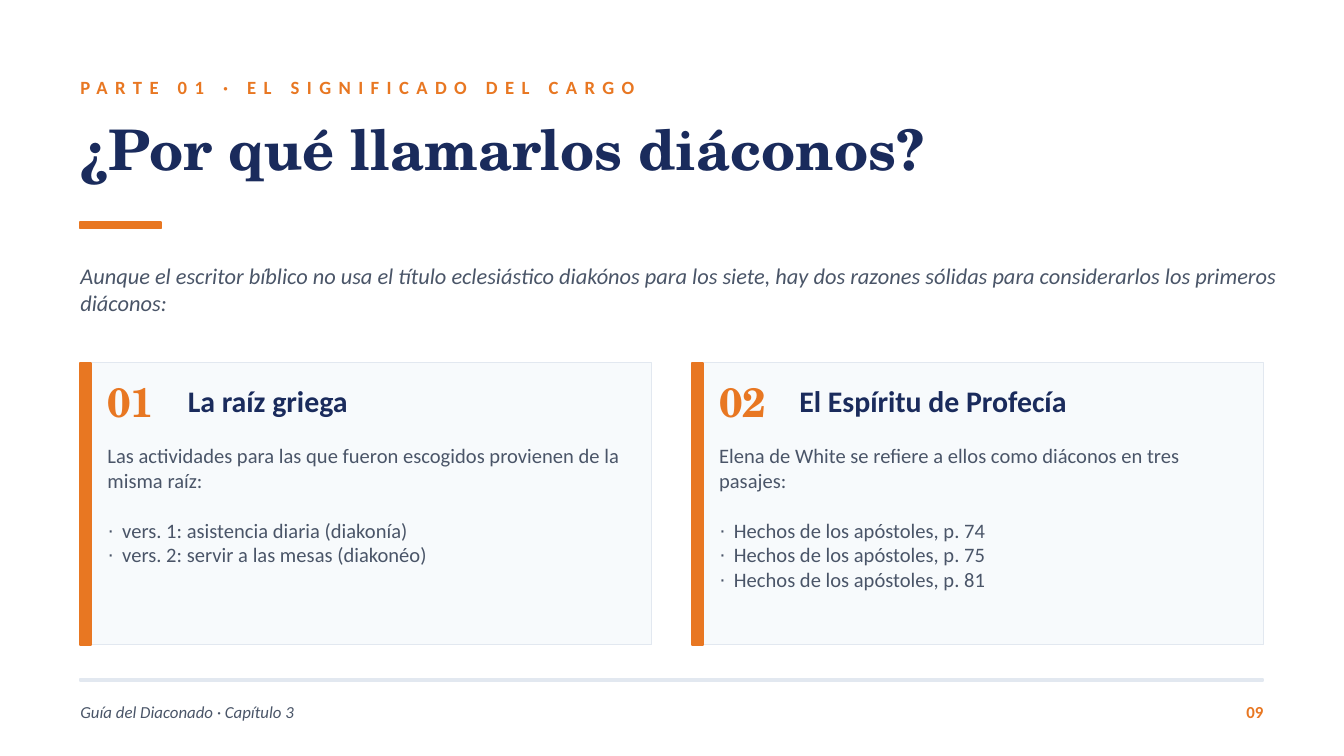
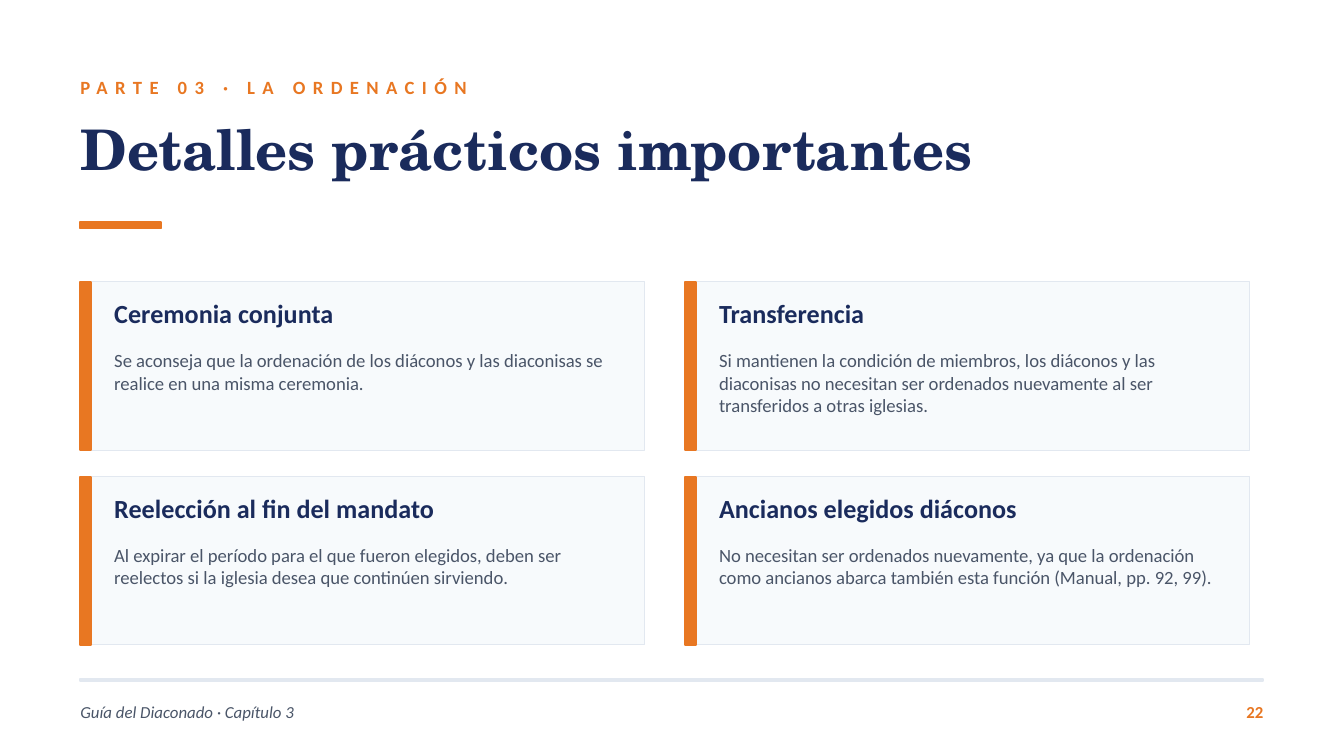
import pptx
import pptx.dml.color
import pptx.enum.shapes
import pptx.enum.text
import pptx.oxml.ns
import pptx.util
import lxml.etree

Cm = pptx.util.Cm
Pt = pptx.util.Pt
ANCHOR = pptx.enum.text.MSO_ANCHOR
ALIGN = pptx.enum.text.PP_ALIGN

COLORS = {
    "navy": "1A2B5C",
    "orange": "E87722",
    "gray": "4A5568",
    "card": "F7FAFC",
    "border": "E2E8F0",
}
SANS = "Calibri"
SERIF = "TeX Gyre Schola"
LEFT = 1.52
BAR_WIDTH = 0.2
BULLET_INDENT = 0.28


def add_rect(page, place, fill, border, border_width=1):
    rect = page.shapes.add_shape(
        pptx.enum.shapes.MSO_SHAPE.RECTANGLE, *[Cm(length) for length in place])
    rect.shadow.inherit = False
    rect.fill.solid()
    rect.fill.fore_color.rgb = pptx.dml.color.RGBColor.from_string(COLORS[fill])
    rect.line.color.rgb = pptx.dml.color.RGBColor.from_string(COLORS[border])
    rect.line.width = Pt(border_width)


def put_text(page, place, lines, size, color, font=SANS, bold=False, italic=False,
             align=ALIGN.LEFT, anchor=ANCHOR.TOP, spacing=None, holder=None):
    """Write a paragraph and any bullets after it, in a placeholder or a new box."""
    box = holder or page.shapes.add_textbox(0, 0, 0, 0)
    page.shapes._spTree.append(box._element)  # in front of the cards
    box.left, box.top, box.width, box.height = [Cm(length) for length in place]
    frame = box.text_frame
    frame.word_wrap = True
    frame.auto_size = pptx.enum.text.MSO_AUTO_SIZE.NONE
    frame.vertical_anchor = anchor
    frame.margin_left = frame.margin_top = frame.margin_right = frame.margin_bottom = 0
    for index, line in enumerate(lines):
        para = frame.paragraphs[0] if index == 0 else frame.add_paragraph()
        span = para.add_run()
        span.text = line
        if spacing:
            span._r.get_or_add_rPr().set("spc", str(spacing * 100))
        para.alignment = align
        para.space_before = Pt(13.4 if index == 1 else 0)
        indent = Cm(BULLET_INDENT) if index else 0
        props = para._p.get_or_add_pPr()
        props.set("marL", str(indent))
        props.set("indent", str(-indent))
        if index:
            bullet = lxml.etree.SubElement(props, pptx.oxml.ns.qn("a:buChar"))
            bullet.set("char", "·")
        else:
            lxml.etree.SubElement(props, pptx.oxml.ns.qn("a:buNone"))
        para.font.name = font
        para.font.size = Pt(size)
        para.font.bold = bold
        para.font.italic = italic
        para.font.color.rgb = pptx.dml.color.RGBColor.from_string(COLORS[color])


deck = pptx.Presentation()
deck.slide_width = Cm(25.4)
deck.slide_height = Cm(14.29)
two_lists, title_only = deck.slide_layouts[3], deck.slide_layouts[5]

# Shared heading, rule and footer
headings = [
    (two_lists, "PARTE 01 · EL SIGNIFICADO DEL CARGO", "¿Por qué llamarlos diáconos?", "09"),
    (title_only, "PARTE 03 · LA ORDENACIÓN", "Detalles prácticos importantes", "22"),
]
for layout, part, title, number in headings:
    page = deck.slides.add_slide(layout)
    put_text(page, (LEFT, 1.27, 15.24, 0.76), [part], 10, "orange", bold=True,
             anchor=ANCHOR.MIDDLE, spacing=4)
    put_text(page, (LEFT, 2.16, 22.86, 1.78), [title], 30, "navy", SERIF, bold=True,
             holder=page.shapes.title)
    add_rect(page, (LEFT, 4.19, 1.52, 0.13), "orange", "orange")
    add_rect(page, (LEFT, 12.83, 22.35, 0.05), "border", "border")
    put_text(page, (LEFT, 13.08, 15.24, 0.76), ["Guía del Diaconado · Capítulo 3"], 9,
             "gray", italic=True, anchor=ANCHOR.MIDDLE)
    put_text(page, (22.61, 13.08, 1.27, 0.76), [number], 9, "orange", bold=True,
             align=ALIGN.RIGHT, anchor=ANCHOR.MIDDLE)

reasons_page, details_page = deck.slides

# Slide 1: two reasons, each with a list
put_text(reasons_page, (LEFT, 4.95, 22.86, 1.52),
         ["Aunque el escritor bíblico no usa el título eclesiástico diakónos para los siete, "
          "hay dos razones sólidas para considerarlos los primeros diáconos:"],
         12, "gray", italic=True)
reasons = [
    ("La raíz griega", [
        "Las actividades para las que fueron escogidos provienen de la misma raíz:",
        "vers. 1: asistencia diaria (diakonía)",
        "vers. 2: servir a las mesas (diakonéo)",
    ]),
    ("El Espíritu de Profecía", [
        "Elena de White se refiere a ellos como diáconos en tres pasajes:",
        "Hechos de los apóstoles, p. 74",
        "Hechos de los apóstoles, p. 75",
        "Hechos de los apóstoles, p. 81",
    ]),
]
top = 6.86
for index, (heading, lines) in enumerate(reasons):
    left = LEFT + index * 11.56
    add_rect(reasons_page, (left, top, 10.8, 5.33), "card", "border", 0.5)
    add_rect(reasons_page, (left, top, BAR_WIDTH, 5.33), "orange", "orange")
    put_text(reasons_page, (left + 0.51, top + 0.25, 1.52, 1.02), [f"{index + 1:02}"],
             22, "orange", SERIF, bold=True)
    put_text(reasons_page, (left + 2.03, top + 0.38, 8.38, 1.02), [heading],
             16, "navy", bold=True)
    put_text(reasons_page, (left + 0.51, top + 1.52, 9.91, 3.56), lines, 11, "gray",
             holder=reasons_page.placeholders[index + 1])

# Slide 2: grid of four details
details = [
    ("Ceremonia conjunta",
     "Se aconseja que la ordenación de los diáconos y las diaconisas se realice en una "
     "misma ceremonia."),
    ("Transferencia",
     "Si mantienen la condición de miembros, los diáconos y las diaconisas no necesitan "
     "ser ordenados nuevamente al ser transferidos a otras iglesias."),
    ("Reelección al fin del mandato",
     "Al expirar el período para el que fueron elegidos, deben ser reelectos si la iglesia "
     "desea que continúen sirviendo."),
    ("Ancianos elegidos diáconos",
     "No necesitan ser ordenados nuevamente, ya que la ordenación como ancianos abarca "
     "también esta función (Manual, pp. 92, 99)."),
]
for index, (heading, detail) in enumerate(details):
    row, column = divmod(index, 2)
    left = LEFT + column * 11.43
    top = 5.33 + row * 3.68
    add_rect(details_page, (left, top, 10.67, 3.18), "card", "border", 0.5)
    add_rect(details_page, (left, top, BAR_WIDTH, 3.18), "orange", "orange")
    put_text(details_page, (left + 0.64, top + 0.3, 9.78, 1.02), [heading],
             14, "navy", bold=True)
    put_text(details_page, (left + 0.64, top + 1.27, 9.78, 1.78), [detail], 10, "gray")

deck.save("out.pptx")
